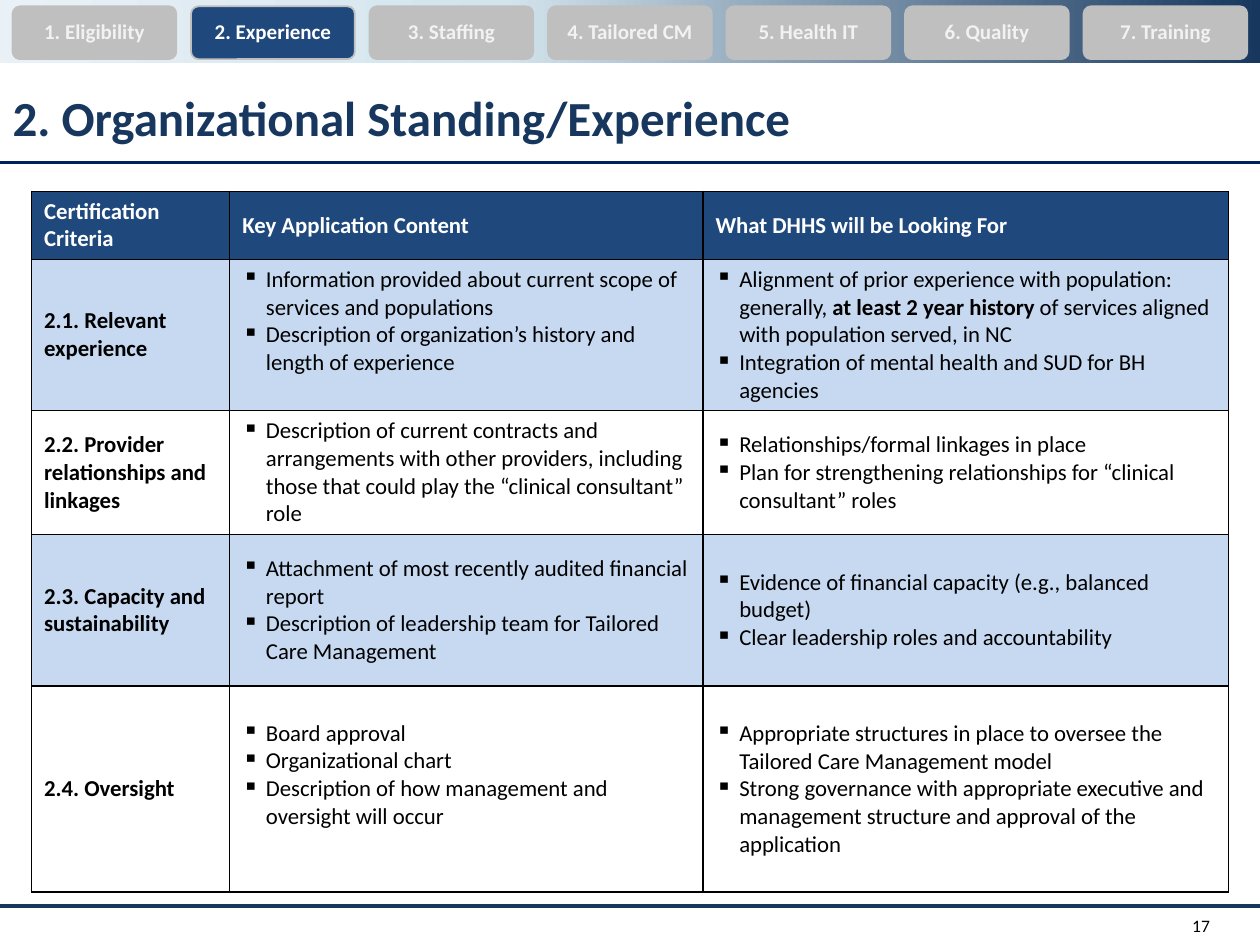
from copy import deepcopy

from lxml import etree
from pptx import Presentation
from pptx.dml.color import RGBColor
from pptx.enum.shapes import MSO_CONNECTOR as CONN, MSO_SHAPE as SHAPE
from pptx.enum.text import MSO_ANCHOR as ANCHOR, PP_ALIGN as ALIGN
from pptx.oxml.ns import qn
from pptx.util import Pt

NAVY = RGBColor(0x17, 0x37, 0x5E)
RULE = RGBColor(0x00, 0x20, 0x60)
BLUE = RGBColor(0x1F, 0x49, 0x7D)
PALE = RGBColor(0xC6, 0xD9, 0xF1)
MIST = RGBColor(0xD3, 0xE4, 0xED)
ICE = RGBColor(0xE9, 0xF1, 0xF6)
GRAY = RGBColor(0xBF, 0xBF, 0xBF)
OFF_WHITE = RGBColor(0xF2, 0xF2, 0xF2)
WHITE = RGBColor(0xFF, 0xFF, 0xFF)
BLACK = RGBColor(0x00, 0x00, 0x00)

TABS = ["1. Eligibility", "2. Experience", "3. Staffing", "4. Tailored CM",
        "5. Health IT", "6. Quality", "7. Training"]
ACTIVE = "2. Experience"

HEADER = ["Certification Criteria", "Key Application Content", "What DHHS will be Looking For"]
ROWS = [
    ("2.1. Relevant experience",
     ["Information provided about current scope of services and populations",
      "Description of organization’s history and length of experience"],
     ["Alignment of prior experience with population: generally, **at least 2 year history "
      "**of services aligned with population served, in NC",
      "Integration of mental health and SUD for BH agencies"]),
    ("2.2. Provider relationships and linkages",
     ["Description of current contracts and arrangements with other providers, including "
      "those that could play the “clinical consultant” role"],
     ["Relationships/formal linkages in place",
      "Plan for strengthening relationships for “clinical consultant” roles"]),
    ("2.3. Capacity and sustainability",
     ["Attachment of most recently audited financial report",
      "Description of leadership team for Tailored Care Management"],
     ["Evidence of financial capacity (e.g., balanced budget)",
      "Clear leadership roles and accountability"]),
    ("2.4. Oversight",
     ["Board approval", "Organizational chart",
      "Description of how management and oversight will occur"],
     ["Appropriate structures in place to oversee the Tailored Care Management model",
      "Strong governance with appropriate executive and management structure and approval "
      "of the application"]),
]
COL_WIDTHS = [113.3, 270.5, 300.2]
ROW_HEIGHTS = [38.9, 86.5, 70.7, 86.5, 118]
RAISED_CELLS = [(1, 1), (4, 1)]
LINE_HEIGHT = 15.9


def style(font, **values):
    font.name = "Calibri"
    font.color.rgb = values.pop("color")
    for name, value in values.items():
        setattr(font, name, value)


def fill_cell(cell, paras, fill, color, bold, bullet):
    cell.vertical_anchor = ANCHOR.MIDDLE
    tcPr = cell._tc.get_or_add_tcPr()
    for side in ("lnL", "lnR", "lnT", "lnB"):
        ln = etree.SubElement(tcPr, qn(f"a:{side}"), w=str(Pt(1)))
        solid = etree.SubElement(ln, qn("a:solidFill"))
        etree.SubElement(solid, qn("a:srgbClr"), val=str(BLACK))
    cell.fill.solid()
    cell.fill.fore_color.rgb = fill
    tf = cell.text_frame
    for i, text in enumerate(paras):
        p = tf.paragraphs[0] if i == 0 else tf.add_paragraph()
        if bullet:
            pPr = p._p.get_or_add_pPr()
            pPr.set("marL", str(Pt(13.5)))
            pPr.set("indent", str(-Pt(13.5)))
            etree.SubElement(pPr, qn("a:buChar"), char="▪")
        for j, part in enumerate(text.split("**")):
            r = p.add_run()
            r.text = part
            style(r.font, size=Pt(13), bold=bold or j % 2 == 1, color=color)


prs = Presentation()
prs.slide_width, prs.slide_height = Pt(720), Pt(540)
s = prs.slides.add_slide(prs.slide_layouts[5])

band = s.shapes.add_shape(SHAPE.RECTANGLE, 0, 0, Pt(720), Pt(36))
band.shadow.inherit = False
band.line.fill.background()
band.fill.gradient()
band.fill.gradient_angle = 0
stops = band._element.spPr.find(".//" + qn("a:gsLst"))
stops.append(deepcopy(stops[0]))
for stop, (position, color) in zip(band.fill.gradient_stops, [(0, ICE), (0.4, MIST), (1, NAVY)]):
    stop.position = position
    stop.color.rgb = color

for y, color, width in [(517.7, NAVY, 2.25), (92.9, RULE, 2)]:
    rule = s.shapes.add_connector(CONN.STRAIGHT, 0, Pt(y), Pt(720), Pt(y))
    rule.line.color.rgb = color
    rule.line.width = Pt(width)
    etree.SubElement(rule._element.spPr, qn("a:effectLst"))

title = s.shapes.title
title.left, title.top, title.width, title.height = 0, Pt(48.2), Pt(698.4), Pt(41.8)
tf = title.text_frame
tf.text = "2. Organizational Standing/Experience"
tf.vertical_anchor = ANCHOR.MIDDLE
p = tf.paragraphs[0]
p.alignment = ALIGN.LEFT
p.line_spacing = 0.9
style(p.runs[0].font, size=Pt(28), bold=True, color=NAVY)

number = s.shapes.add_textbox(Pt(653.8), Pt(517.7), Pt(44.6), Pt(22.3))
tf = number.text_frame
tf.word_wrap = True
tf.vertical_anchor = ANCHOR.MIDDLE
tf.text = "17"
p = tf.paragraphs[0]
p.alignment = ALIGN.RIGHT
style(p.runs[0].font, size=Pt(10), color=BLACK)

frame = s.shapes.add_table(len(ROW_HEIGHTS), len(COL_WIDTHS), Pt(18), Pt(109.3),
                           Pt(sum(COL_WIDTHS)), Pt(sum(ROW_HEIGHTS)))
table = frame.table
for col, width in zip(table.columns, COL_WIDTHS):
    col.width = Pt(width)
for row, height in zip(table.rows, ROW_HEIGHTS):
    row.height = Pt(height)
for c, text in enumerate(HEADER):
    fill_cell(table.cell(0, c), [text], BLUE, WHITE, True, False)
for r, (criterion, content, looking_for) in enumerate(ROWS, start=1):
    fill = PALE if r % 2 else WHITE
    for c, paras in enumerate([[criterion], content, looking_for]):
        fill_cell(table.cell(r, c), paras, fill, BLACK, c == 0, c > 0)
for r, c in RAISED_CELLS:
    table.cell(r, c).margin_bottom = Pt(3.6 + LINE_HEIGHT)

for i, label in enumerate(TABS):
    active = label == ACTIVE
    tab = s.shapes.add_shape(SHAPE.ROUNDED_RECTANGLE, Pt(7.2 + 102 * i), Pt(3.6),
                             Pt(93.6), Pt(30.2))
    tab.adjustments[0] = 0.14
    tab.shadow.inherit = False
    tab.fill.solid()
    tab.fill.fore_color.rgb = BLUE if active else GRAY
    tab.line.color.rgb = GRAY
    tab.line.width = Pt(1)
    tf = tab.text_frame
    tf.word_wrap = True
    tf.vertical_anchor = ANCHOR.MIDDLE
    for side in ("left", "top", "right", "bottom"):
        setattr(tf, f"margin_{side}", Pt(5))
    tf.text = label
    p = tf.paragraphs[0]
    p.alignment = ALIGN.CENTER
    p.line_spacing = 0.9
    style(p.runs[0].font, size=Pt(12), bold=True, color=WHITE if active else OFF_WHITE)

prs.save("out.pptx")
